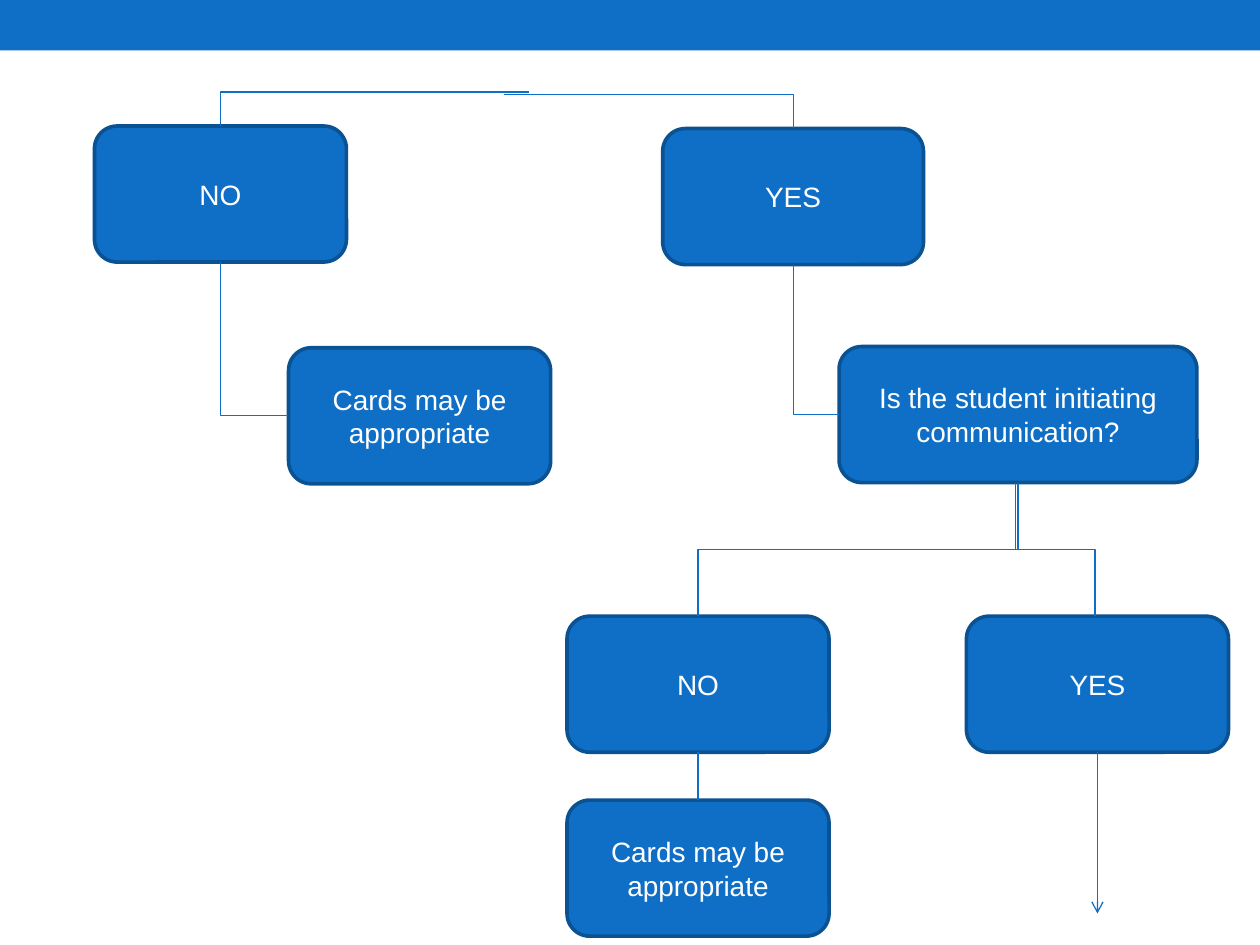
from lxml.etree import SubElement
from pptx import Presentation
from pptx.dml.color import RGBColor
from pptx.enum.shapes import MSO_CONNECTOR, MSO_SHAPE
from pptx.enum.text import MSO_ANCHOR, PP_ALIGN
from pptx.oxml.ns import qn
from pptx.util import Inches, Pt

COLORS = {"blue": "0F6FC6", "edge": "0B5292", "text": "FFFFFF"}

deck = Presentation()
deck.slide_width, deck.slide_height = Inches(10), Inches(7.5)
page = deck.slides.add_slide(deck.slide_layouts[6])

# Grid of 100 columns by 75 rows
COLUMN = deck.slide_width / 100
ROW = deck.slide_height / 75


def add_box(text, left, top, width, height=10.8, kind=MSO_SHAPE.ROUNDED_RECTANGLE,
            edge="edge", size=16, font="Arial"):
    box = page.shapes.add_shape(kind, round(left * COLUMN), round(top * ROW),
                                round(width * COLUMN), round(height * ROW))
    box.shadow.inherit = False
    box.fill.solid()
    box.fill.fore_color.rgb = RGBColor.from_string(COLORS["blue"])
    if edge:
        box.line.color.rgb = RGBColor.from_string(COLORS[edge])
        box.line.width = Pt(2.08)
    else:
        box.line.fill.background()
    if text:
        frame = box.text_frame
        frame.word_wrap = True
        frame.vertical_anchor = MSO_ANCHOR.MIDDLE
        para = frame.paragraphs[0]
        para.alignment = PP_ALIGN.CENTER
        span = para.add_run()
        span.text = text
        span.font.size, span.font.name = Pt(size), font
        span.font.color.rgb = RGBColor.from_string(COLORS["text"])
    return box


def add_line(kind, start, end):
    line = page.shapes.add_connector(kind, round(start[0] * COLUMN), round(start[1] * ROW),
                                     round(end[0] * COLUMN), round(end[1] * ROW))
    line.line.color.rgb = RGBColor.from_string(COLORS["blue"])
    line.line.width = Pt(0.75)
    SubElement(line._element.spPr, qn("a:effectLst"))
    return line


# Top band
add_box("", 0, 0, 100, 4, kind=MSO_SHAPE.RECTANGLE, edge=None)

# Decision boxes
add_box("NO", 7.5, 10, 20)
add_box("YES", 52.6, 10.2, 20.7)
add_box("Cards may be appropriate", 22.9, 27.6, 20.8)
add_box("Is the student initiating communication?", 66.6, 27.5, 28.4)
lower_no = add_box("NO", 45, 48.9, 20.8)
lower_yes = add_box("YES", 76.7, 48.9, 20.8)
lower_cards = add_box("Cards may be appropriate", 45, 63.5, 20.8)

# Single-bend connectors: across first, then up or down
for start, end in [((42, 7.3), (17.5, 10)), ((40, 7.5), (63, 10.2)),
                   ((22.9, 33), (17.5, 20.8)), ((66.6, 32.9), (63, 21))]:
    elbow = add_line(MSO_CONNECTOR.ELBOW, start, end)
    elbow._element.spPr.find(qn("a:prstGeom")).set("prst", "bentConnector2")

# Double-bend connectors: a quarter turn makes them leave downwards
for start, end in [((80.8, 38.3), (55.4, 48.9)), ((80.6, 38.3), (86.9, 48.9))]:
    middle_x, middle_y = (start[0] + end[0]) / 2, (start[1] + end[1]) / 2
    across, down = start[0] - middle_x, start[1] - middle_y
    elbow = add_line(MSO_CONNECTOR.ELBOW, (middle_x + down, middle_y - across),
                     (middle_x - down, middle_y + across))
    elbow._element.spPr.find(qn("a:xfrm")).set("rot", str(90 * 60000))

# Straight link and the arrow that leads on
link = add_line(MSO_CONNECTOR.STRAIGHT, (55.4, 59.7), (55.4, 63.5))
link.begin_connect(lower_no, 2)
link.end_connect(lower_cards, 0)
arrow = add_line(MSO_CONNECTOR.STRAIGHT, (87.1, 59.7), (87.1, 72.5))
arrow.begin_connect(lower_yes, 2)
SubElement(arrow.line._get_or_add_ln(), qn("a:tailEnd"), type="arrow")

deck.save("out.pptx")
